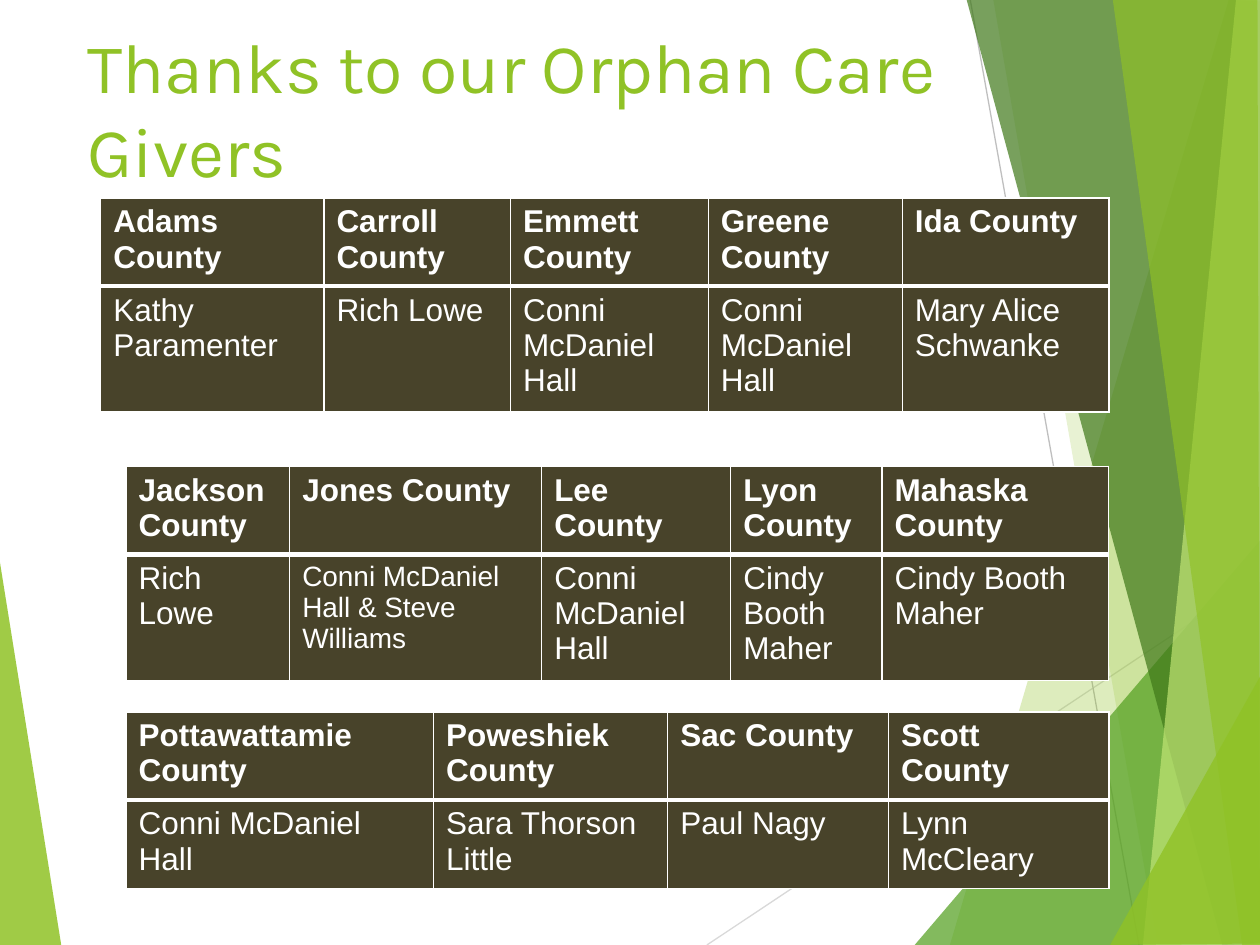
from dataclasses import dataclass, field

from lxml.etree import SubElement
from pptx import Presentation
from pptx.dml.color import RGBColor
from pptx.enum.shapes import MSO_CONNECTOR
from pptx.enum.text import MSO_ANCHOR
from pptx.oxml import parse_xml
from pptx.oxml.ns import nsdecls, qn
from pptx.util import Cm, Pt

Point = tuple[float, float]
WHITE, GREEN, BROWN = "FFFFFF", "90C226", "48432A"
THIN, THICK = 1, 3
ROW_HEIGHT = 1.04


@dataclass
class Facet:
    color: str
    alpha: int
    points: list[Point]


@dataclass
class Ray:
    color: str
    start: Point
    end: Point


@dataclass
class CountyTable:
    left: float
    top: float
    widths: list[float]
    counties: list[str]
    givers: list[str]
    small: set[str] = field(default_factory=set)


BACKDROP = [
    Facet(GREEN, 85, [(-0.03, 11.15), (1.24, 19.08), (-0.03, 19.05)]),
    Ray("D9D9D9", (14.25, 19.05), (25.43, 11.61)),
    Ray("BFBFBF", (19.56, 0), (22.96, 19.05)),
    Facet(GREEN, 30, [(24.77, 0), (19.15, 19.05), (25.45, 19.08), (25.43, 0.03)]),
    Facet(GREEN, 20, [(20.02, -0.03), (23.34, 19.05), (25.43, 19.05), (25.43, -0.03)]),
    Facet("54A021", 72, [(18.44, 19.05), (25.4, 10.9), (25.43, 19.05)]),
    Facet("3F7819", 70, [(19.48, -0.03), (24.64, 19.05), (25.43, 19.02), (25.43, -0.03)]),
    Facet("C0E474", 70, [(24.92, -0.03), (23.04, 19.05), (25.43, 19.05), (25.4, -0.03)]),
    Facet(GREEN, 65, [(22.43, -0.03), (25.04, 19.05), (25.4, 19.05), (25.35, -0.03)]),
    Facet(GREEN, 80, [(22.38, 19.05), (25.43, 13.59), (25.43, 19.02)]),
]

TABLES = [
    CountyTable(
        2.03, 3.99, [4.5, 3.76, 3.99, 3.91, 4.17],
        ["Adams County", "Carroll County", "Emmett County", "Greene County", "Ida County"],
        ["Kathy Paramenter", "Rich Lowe", "Conni McDaniel Hall", "Conni McDaniel Hall",
         "Mary Alice Schwanke"],
    ),
    CountyTable(
        2.54, 9.4, [3.3, 5.08, 3.81, 3.05, 4.57],
        ["Jackson County", "Jones County", "Lee County", "Lyon County", "Mahaska County"],
        ["Rich Lowe", "Conni McDaniel Hall & Steve Williams", "Conni McDaniel Hall",
         "Cindy Booth Maher", "Cindy Booth Maher"],
        {"Conni McDaniel Hall & Steve Williams"},
    ),
    CountyTable(
        2.54, 14.35, [6.2, 4.72, 4.45, 4.45],
        ["Pottawattamie County", "Poweshiek County", "Sac County", "Scott County"],
        ["Conni McDaniel Hall", "Sara Thorson Little", "Paul Nagy", "Lynn McCleary"],
    ),
]


def paint(fmt, color: str) -> None:
    fmt.solid()
    fmt.fore_color.rgb = RGBColor.from_string(color)


def write(tf, text: str, color: str, **font) -> None:
    r = tf.paragraphs[0].add_run()
    r.text = text
    paint(r.font.fill, color)
    for name, value in font.items():
        setattr(r.font, name, value)


def draw_facet(s, facet: Facet) -> None:
    start, *rest = [(Cm(x), Cm(y)) for x, y in facet.points]
    builder = s.shapes.build_freeform(*start)
    builder.add_line_segments(rest, close=True)
    sp = builder.convert_to_shape()
    sp.shadow.inherit = False
    sp.line.fill.background()
    paint(sp.fill, facet.color)
    clr = sp._element.spPr.find(qn("a:solidFill"))[0]
    SubElement(clr, qn("a:alpha")).set("val", str(facet.alpha * 1000))


def draw_ray(s, ray: Ray) -> None:
    ends = [Cm(v) for v in (*ray.start, *ray.end)]
    sp = s.shapes.add_connector(MSO_CONNECTOR.STRAIGHT, *ends)
    paint(sp.line.fill, ray.color)
    sp.line.width = Pt(0.75)
    SubElement(sp._element.spPr, qn("a:effectLst"))


def draw_title(s, text: str) -> None:
    sp = s.shapes.add_textbox(Cm(1.52), Cm(0.33), Cm(17.63), Cm(3.66))
    tf = sp.text_frame
    for name, value in {"word_wrap": True, "vertical_anchor": MSO_ANCHOR.MIDDLE}.items():
        setattr(tf, name, value)
    write(tf, text, GREEN, name="Karla", size=Pt(40))


def set_borders(cell, widths: dict[str, int]) -> None:
    tcPr = cell._tc.get_or_add_tcPr()
    for i, (side, width) in enumerate(widths.items()):
        tcPr.insert(i, parse_xml(
            f'<a:ln{side} {nsdecls("a")} w="{Pt(width)}"><a:solidFill>'
            f'<a:srgbClr val="{WHITE}"/></a:solidFill></a:ln{side}>'
        ))


def draw_table(s, spec: CountyTable) -> None:
    rows = [spec.counties, spec.givers]
    table = s.shapes.add_table(
        len(rows), len(spec.widths), Cm(spec.left), Cm(spec.top),
        Cm(sum(spec.widths)), Cm(ROW_HEIGHT * len(rows)),
    ).table
    table.horz_banding = False
    for column, width in zip(table.columns, spec.widths):
        column.width = Cm(width)
    for i, texts in enumerate(rows):
        header = i == 0
        top, bottom = (THIN, THICK) if header else (THICK, THIN)
        for j, text in enumerate(texts):
            cell = table.cell(i, j)
            paint(cell.fill, BROWN)
            set_borders(cell, {"L": THIN, "R": THIN, "T": top, "B": bottom})
            size = Pt(16 if text in spec.small else 18)
            write(cell.text_frame, text, WHITE, name="Arial", size=size, bold=header)


def main() -> None:
    prs = Presentation()
    prs.slide_width, prs.slide_height = Cm(25.4), Cm(19.05)
    s = prs.slides.add_slide(prs.slide_layouts[6])
    paint(s.background.fill, WHITE)
    for item in BACKDROP:
        if isinstance(item, Facet):
            draw_facet(s, item)
        else:
            draw_ray(s, item)
    draw_title(s, "Thanks to our Orphan Care Givers")
    for spec in TABLES:
        draw_table(s, spec)
    prs.save("out.pptx")


if __name__ == "__main__":
    main()
